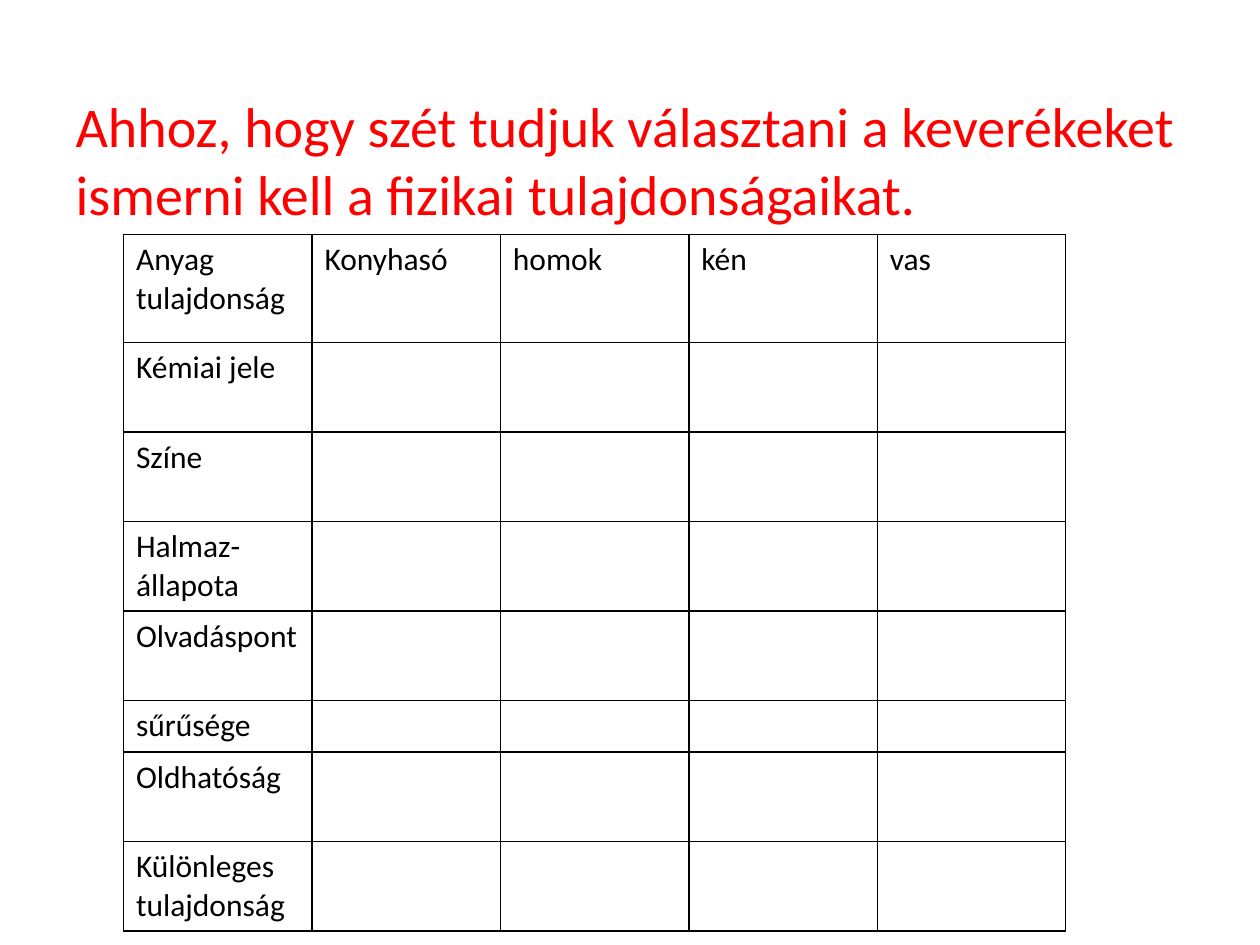
from dataclasses import dataclass

from lxml import etree
from pptx import Presentation
from pptx.dml import color
from pptx.enum import text
from pptx.oxml import ns
from pptx.util import Inches, Pt


@dataclass(frozen=True)
class Theme:
    font: str = "Calibri"
    red: str = "FF0000"
    black: str = "000000"
    head: int = 32
    body: int = 18
    rule: int = 1


@dataclass(frozen=True)
class Row:
    cells: tuple[str, ...]
    high: float = 0.71


THEME = Theme()
TITLE = "Ahhoz, hogy szét tudjuk választani a keverékeket ismerni kell a fizikai tulajdonságaikat."
COLS = 5
WIDE = 7.48
ROWS = (
    Row(("Anyag\ntulajdonság", "Konyhasó", "homok", "kén", "vas"), 0.86),
    Row(("Kémiai jele",)),
    Row(("Színe",)),
    Row(("Halmaz-állapota",)),
    Row(("Olvadáspont",)),
    Row(("sűrűsége",), 0.41),
    Row(("Oldhatóság",)),
    Row(("Különleges tulajdonság",)),
)


def write(frame, words: str, *, size: int, tint: str) -> None:
    frame.text = words
    frame.word_wrap = True
    for para in frame.paragraphs:
        para.alignment = text.PP_ALIGN.LEFT
        para.font.size = Pt(size)
        for run in para.runs:
            run.font.name = THEME.font
            run.font.size = Pt(size)
            run.font.color.rgb = color.RGBColor.from_string(tint)


def edge(cell) -> None:
    props = cell._tc.get_or_add_tcPr()
    for spot, side in enumerate(("lnL", "lnR", "lnT", "lnB")):
        line = etree.Element(ns.qn(f"a:{side}"), w=str(Pt(THEME.rule)))
        fill = etree.SubElement(line, ns.qn("a:solidFill"))
        etree.SubElement(fill, ns.qn("a:srgbClr"), val=THEME.black)
        props.insert(spot, line)


def head(slide) -> None:
    title = slide.shapes.title
    title.left, title.top = Inches(0.5), Inches(0.68)
    title.width, title.height = Inches(9), Inches(6.02)
    frame = title.text_frame
    write(frame, TITLE, size=THEME.head, tint=THEME.red)
    frame.auto_size = text.MSO_AUTO_SIZE.NONE
    frame.vertical_anchor = text.MSO_ANCHOR.TOP


def grid(slide, rows: tuple[Row, ...]) -> None:
    tall = sum(row.high for row in rows)
    table = slide.shapes.add_table(
        len(rows), COLS, Inches(0.98), Inches(1.86), Inches(WIDE), Inches(tall)
    ).table
    table.first_row = False
    table.horz_banding = False
    for col in table.columns:
        col.width = Inches(WIDE / COLS)
    for line, row in zip(table.rows, rows):
        line.height = Inches(row.high)
        for spot, cell in enumerate(line.cells):
            words = row.cells[spot] if spot < len(row.cells) else ""
            write(cell.text_frame, words, size=THEME.body, tint=THEME.black)
            cell.fill.background()
            edge(cell)


def main() -> None:
    deck = Presentation()
    deck.slide_width, deck.slide_height = Inches(10), Inches(7.5)
    slide = deck.slides.add_slide(deck.slide_layouts[5])
    head(slide)
    grid(slide, ROWS)
    deck.save("out.pptx")


if __name__ == "__main__":
    main()
